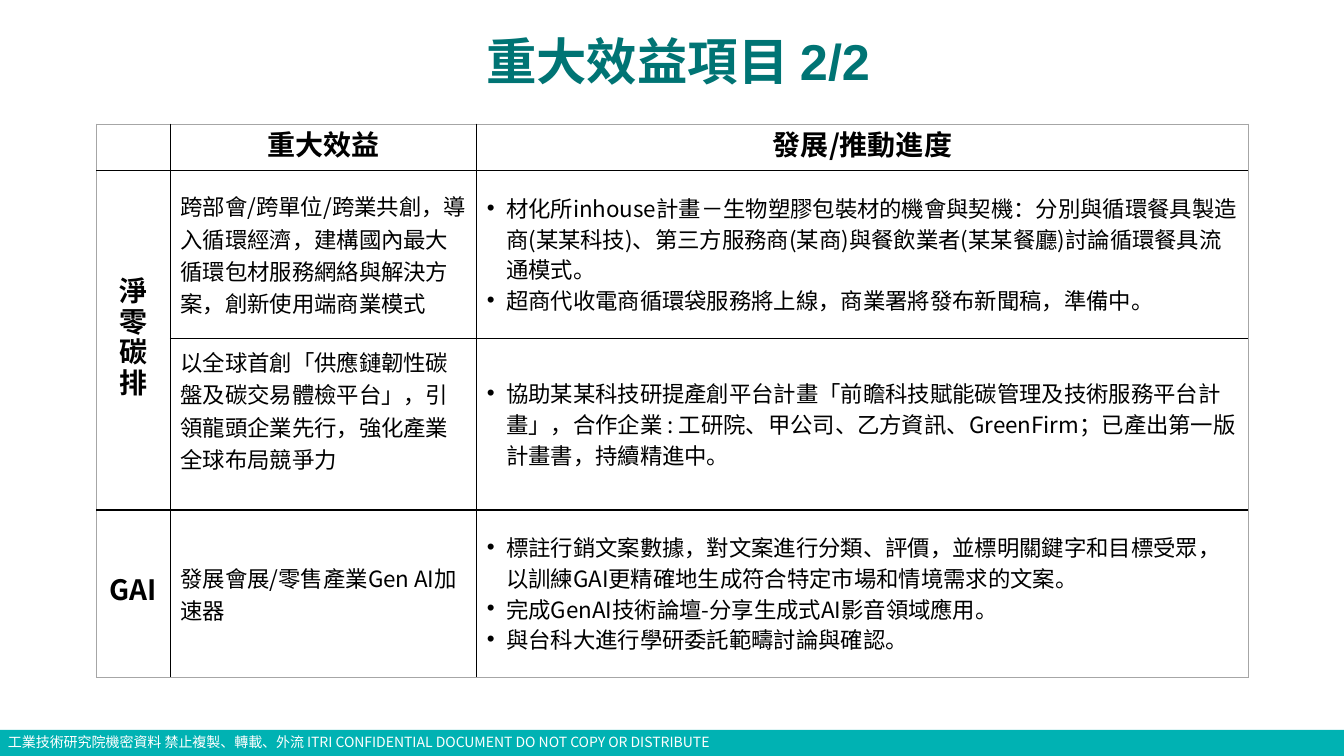
from dataclasses import dataclass

from lxml.etree import SubElement
from pptx import Presentation
from pptx.dml.color import RGBColor
from pptx.enum.shapes import MSO_SHAPE as Preset
from pptx.enum.text import MSO_ANCHOR as Anchor, MSO_AUTO_SIZE as AutoSize, PP_ALIGN as Align
from pptx.oxml.ns import qn
from pptx.util import Inches, Pt


@dataclass(frozen=True)
class Theme:
    title_font: str = "Arial"
    body_font: str = "Noto Sans CJK SC"
    title_color: str = "007474"
    band: str = "00B2B3"
    ink: str = "000000"
    paper: str = "FFFFFF"
    frame: str = "A6A6A6"
    title_size: int = 36
    head_size: int = 20
    body_size: int = 16
    note_size: int = 10
    head_pitch: int = 24
    body_pitch: int = 22


def grid(units):
    return Inches(units / 10)


class SlideBuilder:
    def __init__(self, slide, theme):
        self.slide = slide
        self.theme = theme

    def style(self, paragraph, size, color, bold=False, align=Align.LEFT, pitch=None, font=None):
        paragraph.alignment = align
        if pitch:
            paragraph.line_spacing = Pt(pitch)
        paragraph.font.size = Pt(size)
        paragraph.font.bold = bold
        paragraph.font.color.rgb = RGBColor.from_string(color)
        paragraph.font.name = font or self.theme.body_font
        defaults = paragraph._p.pPr.find(qn("a:defRPr"))
        SubElement(defaults, qn("a:ea"), typeface=self.theme.body_font)

    def title(self, text, left, top, width, height):
        heading = self.slide.shapes.title
        heading.left, heading.top, heading.width, heading.height = map(grid, (left, top, width, height))
        frame = heading.text_frame
        frame.text = text
        frame.auto_size = AutoSize.NONE
        frame.vertical_anchor = Anchor.TOP
        frame.margin_top = frame.margin_bottom = 0
        self.style(frame.paragraphs[0], self.theme.title_size, self.theme.title_color,
                   True, Align.CENTER, font=self.theme.title_font)

    def band(self, left, top, width, height):
        bar = self.slide.shapes.add_shape(Preset.RECTANGLE, *map(grid, (left, top, width, height)))
        bar.shadow.inherit = False
        bar.fill.solid()
        bar.fill.fore_color.rgb = RGBColor.from_string(self.theme.band)
        bar.line.fill.background()

    def note(self, text, left, top, width, height):
        frame = self.slide.shapes.add_textbox(*map(grid, (left, top, width, height))).text_frame
        frame.word_wrap = True
        frame.text = text
        self.style(frame.paragraphs[0], self.theme.note_size, self.theme.paper)

    def table(self, left, top, columns, rows):
        size = (sum(columns), sum(rows))
        table = self.slide.shapes.add_table(
            len(rows), len(columns), *map(grid, (left, top, *size))).table
        table.first_row = table.horz_banding = False
        for column, width in zip(table.columns, columns):
            column.width = grid(width)
        for row, height in zip(table.rows, rows):
            row.height = grid(height)
        for r in range(len(rows)):
            for c in range(len(columns)):
                cell = table.cell(r, c)
                outer = {"L": c == 0, "R": c == len(columns) - 1, "T": r == 0, "B": r == len(rows) - 1}
                for side, is_outer in outer.items():
                    self.border(cell, side, is_outer)
                cell.fill.background()
                cell.vertical_anchor = Anchor.MIDDLE
        return table

    def border(self, cell, side, is_outer):
        color, width = (self.theme.frame, 0.5) if is_outer else (self.theme.ink, 1)
        line = SubElement(cell._tc.get_or_add_tcPr(), qn(f"a:ln{side}"), w=str(Pt(width)))
        SubElement(SubElement(line, qn("a:solidFill")), qn("a:srgbClr"), val=color)

    def heading(self, cell, text, pitch):
        cell.text = text
        self.style(cell.text_frame.paragraphs[0], self.theme.head_size, self.theme.ink,
                   True, Align.CENTER, pitch)

    def benefit(self, cell, text):
        cell.text = text
        self.style(cell.text_frame.paragraphs[0], self.theme.body_size, self.theme.ink)

    def bullets(self, cell, items):
        cell.text = "\n".join(items)
        for paragraph in cell.text_frame.paragraphs:
            properties = paragraph._p.get_or_add_pPr()
            properties.set("marL", str(Inches(0.19)))
            properties.set("indent", str(-Inches(0.19)))
            SubElement(properties, qn("a:buFont"), typeface="Arial")
            SubElement(properties, qn("a:buChar"), char="•")
            self.style(paragraph, self.theme.body_size, self.theme.ink, pitch=self.theme.body_pitch)


HEADINGS = ["重大效益", "發展/推動進度"]
TOPICS = {1: "淨零碳排", 3: "GAI"}
PROGRESS = [
    ("跨部會/跨單位/跨業共創，導入循環經濟，建構國內最大循環包材服務網絡與解決方案，創新使用端商業模式",
     ["材化所inhouse計畫－生物塑膠包裝材的機會與契機：分別與循環餐具製造商(某某科技)、"
      "第三方服務商(某商)與餐飲業者(某某餐廳)討論循環餐具流通模式。",
      "超商代收電商循環袋服務將上線，商業署將發布新聞稿，準備中。"]),
    ("以全球首創「供應鏈韌性碳盤及碳交易體檢平台」，引領龍頭企業先行，強化產業全球布局競爭力",
     ["協助某某科技研提產創平台計畫「前瞻科技賦能碳管理及技術服務平台計畫」，"
      "合作企業 : 工研院、甲公司、乙方資訊、GreenFirm；已產出第一版計畫書，持續精進中。"]),
    ("發展會展/零售產業Gen AI加速器",
     ["標註行銷文案數據，對文案進行分類、評價，並標明關鍵字和目標受眾，"
      "以訓練GAI更精確地生成符合特定市場和情境需求的文案。",
      "完成GenAI技術論壇-分享生成式AI影音領域應用。",
      "與台科大進行學研委託範疇討論與確認。"]),
]


def main():
    deck = Presentation()
    deck.slide_width, deck.slide_height = Inches(13.33), Inches(7.5)
    theme = Theme()
    page = SlideBuilder(deck.slides.add_slide(deck.slide_layouts[5]), theme)

    page.band(0, 72.4, 133.3, 2.6)
    page.note("工業技術研究院機密資料 禁止複製、轉載、外流 "
              "ITRI CONFIDENTIAL DOCUMENT DO NOT COPY OR DISTRIBUTE", -0.2, 72.3, 103.8, 2.7)
    page.title("重大效益項目 2/2", 27.2, 3, 80.1, 5)

    benefits = page.table(9.6, 12.3, [7.3, 30.4, 76.5], [4.6, 16.7, 17, 16.6])
    benefits.cell(1, 0).merge(benefits.cell(2, 0))
    for column, text in enumerate(HEADINGS, 1):
        page.heading(benefits.cell(0, column), text, theme.head_pitch)
    for row, topic in TOPICS.items():
        page.heading(benefits.cell(row, 0), topic, theme.body_pitch)
    for row, (benefit, steps) in enumerate(PROGRESS, 1):
        page.benefit(benefits.cell(row, 1), benefit)
        page.bullets(benefits.cell(row, 2), steps)
    benefits.cell(2, 1).margin_bottom = grid(3.3)

    deck.save("out.pptx")


if __name__ == "__main__":
    main()
